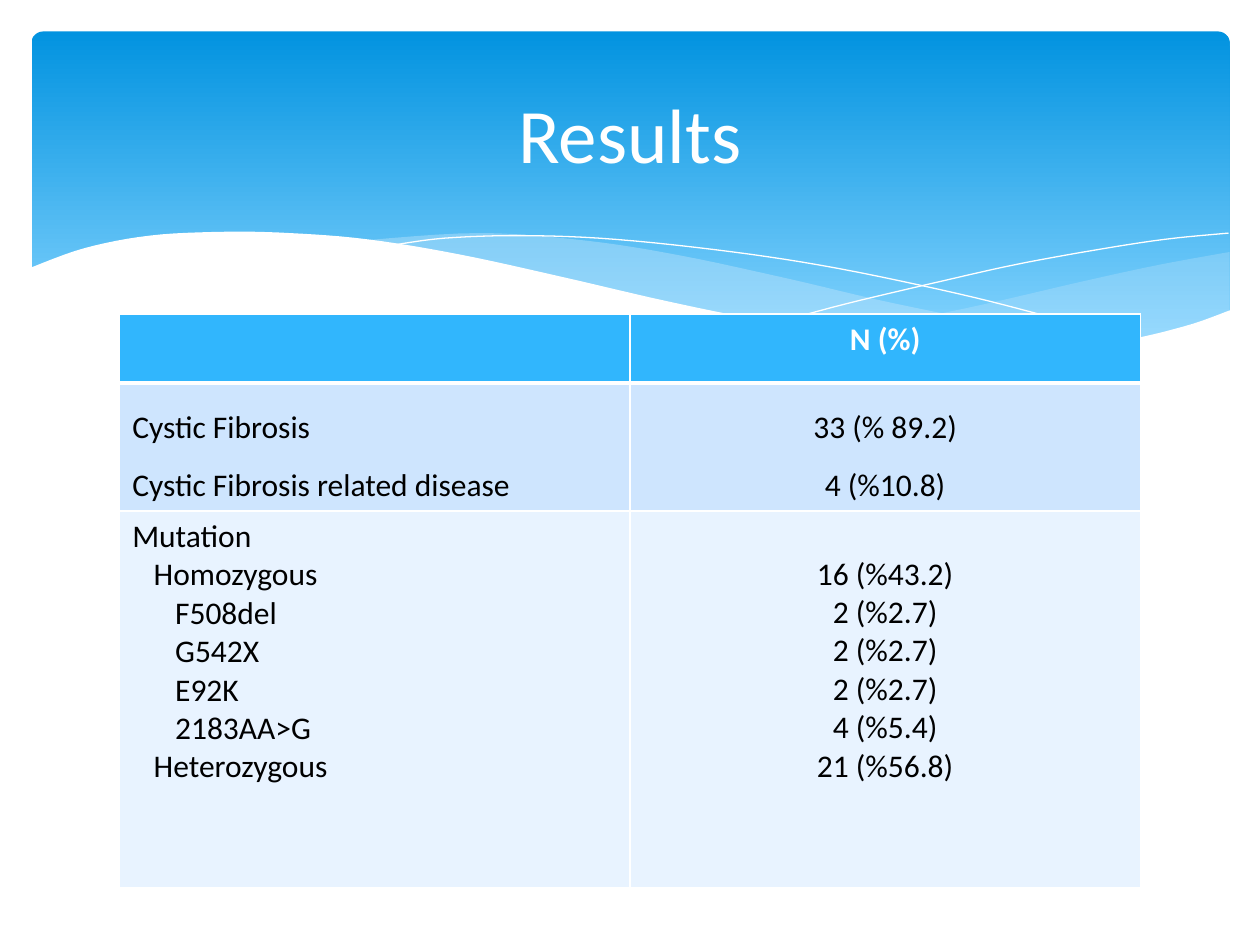
from lxml import etree
from pptx import Presentation
from pptx import util as u
from pptx.dml.color import RGBColor
from pptx.enum import shapes, text
from pptx.oxml.ns import qn

FONT = "Calibri"
COLUMNS, ROWS = 10, 7.5
INDENT = 0.17
LINE_HEIGHT = 0.3
CENTER = text.PP_ALIGN.CENTER

BANDS = [
    (29, [[(9.76, 2), (9.21, 2.1), (8.61, 2.23), (7.79, 2.42), (7.06, 2.57), (6.61, 2.65)],
          [(6.61, 2.65), (7.19, 2.72), (7.92, 2.77), (8.54, 2.76), (9.13, 2.67), (9.76, 2.47)]]),
    (40, [[(8.93, 2.73), (8.07, 2.6), (7.06, 2.4), (6.29, 2.22), (5.41, 2.03), (4.65, 1.91),
           (3.8, 1.85), (2.86, 1.91)],
          [(2.86, 1.91), (3.62, 2.03), (4.49, 2.22), (5.66, 2.48), (6.5, 2.64), (7.36, 2.75),
           (8.18, 2.78), (8.93, 2.73)]]),
]
STRANDS = [
    [(3.09, 1.95), (3.53, 1.89), (4.16, 1.87), (4.89, 1.9), (5.82, 2), (6.65, 2.13),
     (7.6, 2.33), (8.31, 2.51), (9.07, 2.72)],
    [(6.13, 2.57), (6.72, 2.41), (7.48, 2.23), (8.06, 2.1), (8.66, 1.99), (9.24, 1.9), (9.75, 1.85)],
]
FOREGROUND = [
    [(9.77, 2.46), (9.4, 2.59), (8.87, 2.71), (8.23, 2.77), (7.61, 2.75), (6.88, 2.68), (6.03, 2.54),
     (5.29, 2.39), (4.47, 2.2), (3.65, 2.02), (2.92, 1.9), (2.3, 1.85), (1.77, 1.84), (1.19, 1.87),
     (0.67, 1.97), (0.23, 2.13)],
    [(0.23, 3.29), (9.77, 3.29)],
]
RESULTS = [
    {"height": 0.55, "fill": "31B6FD", "rule": 3, "format": {"color": "FFFFFF", "bold": True},
     "labels": [], "values": ["N (%)"]},
    {"height": 0.95, "fill": "CEE5FE", "format": {"spacing": 1.5},
     "labels": [("Cystic Fibrosis", 0), ("Cystic Fibrosis related disease", 0)],
     "values": ["33 (% 89.2)", "4 (%10.8)"]},
    {"height": 2.99, "fill": "E8F3FF", "skip": 1,
     "labels": [("Mutation", 0), ("Homozygous", 1), ("F508del", 2), ("G542X", 2), ("E92K", 2),
                ("2183AA>G", 2), ("Heterozygous", 1)],
     "values": ["16 (%43.2)", "2 (%2.7)", "2 (%2.7)", "2 (%2.7)", "4 (%5.4)", "21 (%56.8)"]},
]


def paint(target, color):
    """Give a fill a solid hex colour."""
    target.solid()
    target.fore_color.rgb = RGBColor.from_string(color)


def write(frame, content, size=18, color="000000", bold=False, align=None, spacing=None, level=0):
    """Add one formatted paragraph to a text frame."""
    para = frame.paragraphs[0] if not frame.text else frame.add_paragraph()
    para.alignment, para.line_spacing = align, spacing
    if level:
        para._p.get_or_add_pPr().set("marL", str(u.Inches(level * INDENT)))
    span = para.add_run()
    span.text = content
    span.font.name, span.font.size, span.font.bold = FONT, u.Pt(size), bold
    paint(span.font.fill, color)


def smooth(knots, steps=6):
    """Return points on a Catmull-Rom curve through the knots."""
    padded = [knots[0], *knots, knots[-1]]
    points = []
    for a, b, c, d in zip(padded, padded[1:], padded[2:], padded[3:]):
        for step in range(steps):
            t = step / steps
            points.append(tuple(
                (2 * q + (r - p) * t + (2 * p - 5 * q + 4 * r - s) * t ** 2
                 + (3 * q - p - 3 * r + s) * t ** 3) / 2
                for p, q, r, s in zip(a, b, c, d)))
    return points + [knots[-1]]


def add_wave(page, box, edges, color, opacity=100, closed=True):
    """Draw smooth edges, on the page grid of a box, as a filled band or a thin strand."""
    left, top, width, height = box
    points = [(round(left + x * width / COLUMNS), round(top + y * height / ROWS))
              for edge in edges for x, y in smooth(edge)]
    builder = page.shapes.build_freeform(*points[0], scale=1.0)
    builder.add_line_segments(points[1:], close=closed)
    wave = builder.convert_to_shape()
    wave.shadow.inherit = False
    if not closed:
        wave.fill.background()
        paint(wave.line.fill, color)
        wave.line.width = 0
        return
    paint(wave.fill, color)
    wave.line.fill.background()
    if opacity < 100:
        tone = wave.fill._xPr.find(qn("a:solidFill"))[0]
        etree.SubElement(tone, qn("a:alpha")).set("val", str(opacity * 1000))


def add_banner(page, box):
    """Draw the gradient panel and the waves across its foot."""
    left, top, width, height = box
    panel = page.shapes.add_shape(
        shapes.MSO_SHAPE.ROUNDED_RECTANGLE, left + round(width * 0.025), top + round(height / 30),
        round(width * 0.951), round(height * 0.36))
    panel.adjustments[0] = 0.034
    panel.shadow.inherit = False
    panel.line.fill.background()
    panel.fill.gradient()
    panel.fill.gradient_angle = 270
    for stop, place, color in zip(panel.fill.gradient_stops, (0, 0.9), ("0293E0", "83D3FE")):
        stop.position = place
        stop.color.rgb = RGBColor.from_string(color)
    for opacity, edges in BANDS:
        add_wave(page, box, edges, "C6E7FC", opacity)
    for strand in STRANDS:
        add_wave(page, box, [strand], "FFFFFF", closed=False)
    add_wave(page, box, FOREGROUND, "FFFFFF")


def format_cell(cell, fill, rule):
    """Fill a cell and give it white borders with a chosen lower rule."""
    properties = cell._tc.get_or_add_tcPr()
    for side, width in (("L", 1), ("R", 1), ("T", 1), ("B", rule)):
        border = etree.SubElement(properties, qn(f"a:ln{side}"), w=str(u.Pt(width)))
        solid = etree.SubElement(border, qn("a:solidFill"))
        etree.SubElement(solid, qn("a:srgbClr"), val="FFFFFF")
    paint(cell.fill, fill)


def add_results(page, box):
    """Place the two-column results table in a box."""
    table = page.shapes.add_table(len(RESULTS), 2, *box).table
    for column in table.columns:
        column.width = box[2] // 2
    for row, entry in zip(table.rows, RESULTS):
        row.height = u.Inches(entry["height"])
        label, value = row.cells
        style = entry.get("format", {})
        for cell in row.cells:
            format_cell(cell, entry["fill"], entry.get("rule", 1))
        for content, level in entry["labels"]:
            write(label.text_frame, content, level=level, **style)
        value.margin_top = u.Inches(0.05 + entry.get("skip", 0) * LINE_HEIGHT)
        for content in entry["values"]:
            write(value.text_frame, content, align=CENTER, **style)


def add_title(page, box, content):
    """Set the title placeholder in a box, in front of the banner."""
    title = page.shapes.title
    title.left, title.top, title.width, title.height = box
    title.text_frame.vertical_anchor = text.MSO_ANCHOR.MIDDLE
    write(title.text_frame, content, size=44, color="FFFFFF", align=CENTER)
    page.shapes._spTree.append(title._element)


def grid_box(*lengths):
    """Turn columns and rows of the page grid into slide lengths."""
    return tuple(u.Inches(length) for length in lengths)


def main():
    """Build the results slide."""
    deck = Presentation()
    deck.slide_width, deck.slide_height = grid_box(COLUMNS, ROWS)
    page = deck.slides.add_slide(deck.slide_layouts[5])
    add_banner(page, grid_box(0, 0, COLUMNS, ROWS))
    add_results(page, grid_box(0.95, 2.49, 8.1, 4.49))
    add_title(page, grid_box(0.5, 0.37, 9, 1.37), "Results")
    deck.save("out.pptx")


if __name__ == "__main__":
    main()
